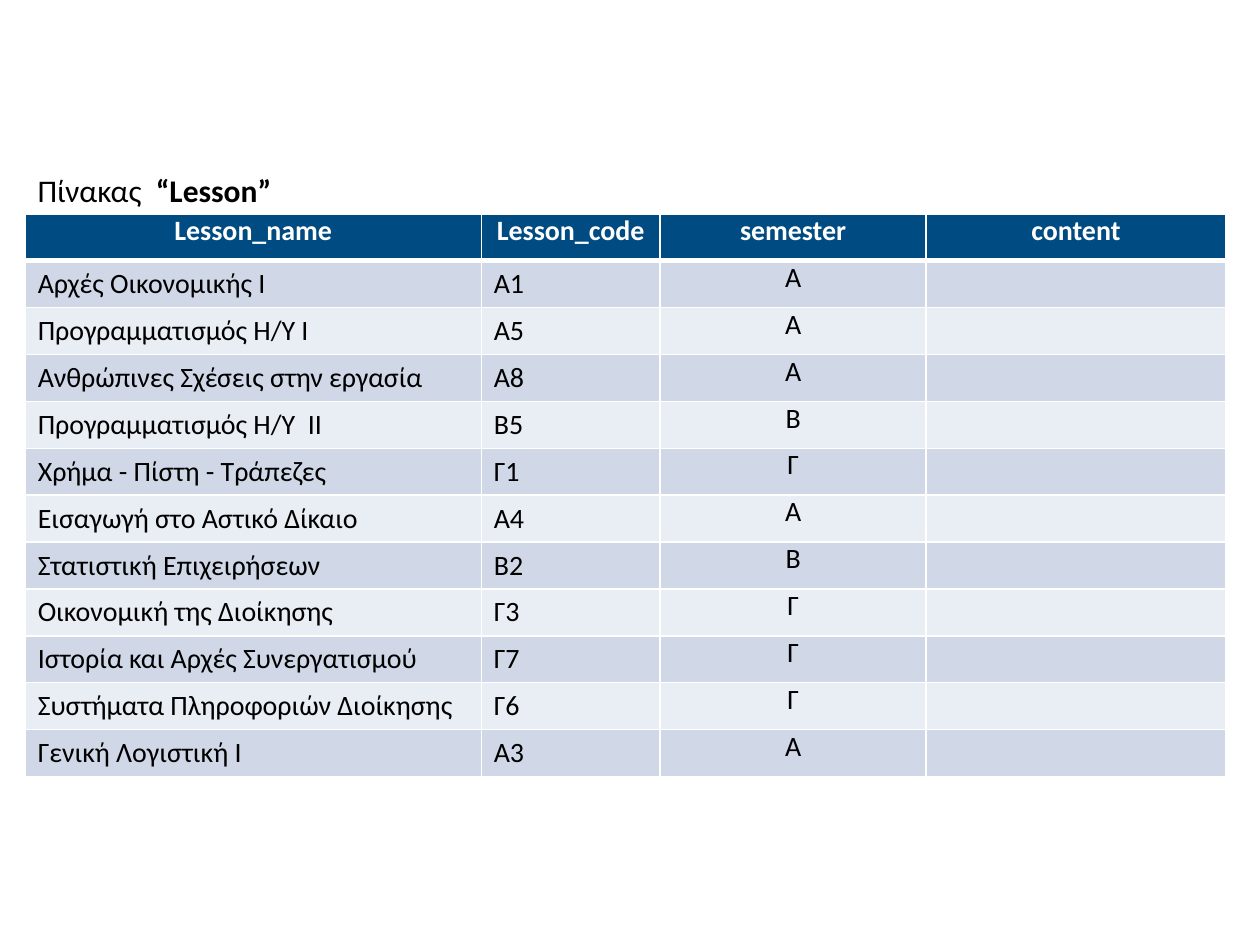
from lxml import etree
from pptx import Presentation
from pptx.dml.color import RGBColor
from pptx.enum.text import MSO_AUTO_SIZE, PP_ALIGN
from pptx.oxml.ns import qn
from pptx.util import Inches, Pt

CENTER = PP_ALIGN.CENTER
LEFT = PP_ALIGN.LEFT
FIT_SHAPE = MSO_AUTO_SIZE.SHAPE_TO_FIT_TEXT

HEADERS = ["Lesson_name", "Lesson_code", "semester", "content"]
LESSONS = [
    ("Αρχές Οικονομικής Ι", "Α1", "Α", ""),
    ("Προγραμματισμός Η/Υ Ι", "Α5", "Α", ""),
    ("Ανθρώπινες Σχέσεις στην εργασία", "Α8", "Α", ""),
    ("Προγραμματισμός Η/Υ  ΙΙ", "Β5", "Β", ""),
    ("Χρήμα - Πίστη - Τράπεζες", "Γ1", "Γ", ""),
    ("Εισαγωγή στο Αστικό Δίκαιο", "Α4", "Α", ""),
    ("Στατιστική Επιχειρήσεων", "Β2", "Β", ""),
    ("Οικονομική της Διοίκησης", "Γ3", "Γ", ""),
    ("Ιστορία και Αρχές Συνεργατισμού", "Γ7", "Γ", ""),
    ("Συστήματα Πληροφοριών Διοίκησης", "Γ6", "Γ", ""),
    ("Γενική Λογιστική Ι", "Α3", "Α", ""),
]
COL_WIDTHS = [3.62, 1.42, 2.11, 2.38]
ROW_HEIGHT = 0.37
BAND_FILLS = ["E9EDF4", "D0D8E8"]


def add_run(p, text, size, color, bold=False):
    r = p.add_run()
    r.text = text
    r.font.name = "Calibri"
    r.font.size = Pt(size)
    r.font.bold = bold
    r.font.color.rgb = RGBColor.from_string(color)


def set_borders(cell, widths):
    tc_pr = cell._tc.get_or_add_tcPr()
    for i, (side, width) in enumerate(widths.items()):
        ln = etree.Element(qn(f"a:{side}"), w=str(Pt(width)))
        fill = etree.SubElement(ln, qn("a:solidFill"))
        etree.SubElement(fill, qn("a:srgbClr"), val="FFFFFF")
        tc_pr.insert(i, ln)


prs = Presentation()
prs.slide_width = Inches(10)
prs.slide_height = Inches(7.5)
s = prs.slides.add_slide(prs.slide_layouts[6])

rows = [HEADERS] + LESSONS
frame = s.shapes.add_table(
    len(rows), len(HEADERS), Inches(0.2), Inches(1.7),
    Inches(sum(COL_WIDTHS)), Inches(ROW_HEIGHT * len(rows)))
table = frame.table
for col, width in zip(table.columns, COL_WIDTHS):
    col.width = Inches(width)

for i, row in enumerate(rows):
    table.rows[i].height = Inches(ROW_HEIGHT)
    header = i == 0
    for j, text in enumerate(row):
        cell = table.cell(i, j)
        cell.fill.solid()
        cell.fill.fore_color.rgb = RGBColor.from_string("004B82" if header else BAND_FILLS[i % 2])
        bottom = 3 if header else 1
        top = 3 if i == 1 else 1
        set_borders(cell, {"lnL": 1, "lnR": 1, "lnT": top, "lnB": bottom})
        tight = header or j >= 2
        if tight:
            cell.margin_left = cell.margin_right = Inches(0.07)
            cell.margin_top = cell.margin_bottom = 0
        p = cell.text_frame.paragraphs[0]
        p.alignment = CENTER if tight else LEFT
        if text:
            add_run(p, text, 16, "FFFFFF" if header else "000000", header)

sp = s.shapes.add_textbox(Inches(0.2), Inches(1.31), Inches(2.08), Inches(0.4))
tf = sp.text_frame
tf.word_wrap = False
tf.auto_size = FIT_SHAPE
p = tf.paragraphs[0]
add_run(p, "Πίνακας  ", 18, "000000")
add_run(p, "“Lesson”", 18, "000000", True)

prs.save("out.pptx")
